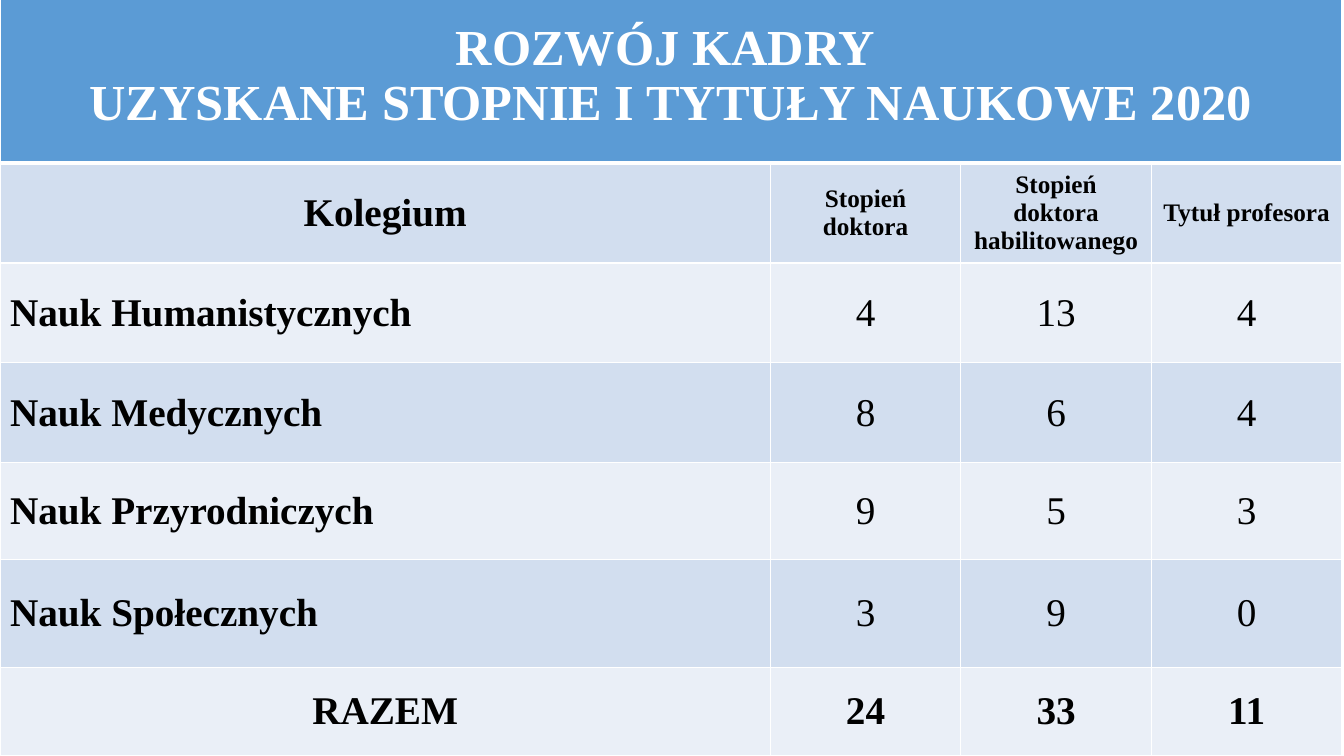
import pptx
import pptx.util
import pptx.dml.color
import pptx.enum.text
import pptx.oxml
import pptx.oxml.ns

Inches = pptx.util.Inches
ALIGN = pptx.enum.text.PP_ALIGN
BLUE, DARK, LIGHT = "5B9BD5", "D2DEEF", "EAEFF7"
WHITE, BLACK = "FFFFFF", "000000"


def color(code):
    return pptx.dml.color.RGBColor.from_string(code)


def style(cell, fill, size, ink, bold, align, under):
    cell.fill.solid()
    cell.fill.fore_color.rgb = color(fill)
    cell.vertical_anchor = pptx.enum.text.MSO_ANCHOR.MIDDLE
    for para in cell.text_frame.paragraphs:
        para.alignment = align
        for run in para.runs:
            run.font.name = "Times New Roman"
            run.font.size = pptx.util.Pt(size)
            run.font.bold = bold
            run.font.color.rgb = color(ink)
    # White borders go before the fill
    props = cell._tc.get_or_add_tcPr()
    for spot, side in enumerate("LRTB"):
        width = pptx.util.Pt(under if side == "B" else 1)
        line = pptx.oxml.parse_xml(
            f'<a:ln{side} {pptx.oxml.ns.nsdecls("a")} w="{width}"><a:solidFill>'
            f'<a:srgbClr val="{WHITE}"/></a:solidFill></a:ln{side}>')
        props.insert(spot, line)


deck = pptx.Presentation()
deck.slide_width, deck.slide_height = Inches(13.33), Inches(7.5)
slide = deck.slides.add_slide(deck.slide_layouts[6])

# Table contents
title = "ROZWÓJ KADRY \nUZYSKANE STOPNIE I TYTUŁY NAUKOWE 2020"
rows = [
    ["Kolegium", "Stopień doktora", "Stopień doktora habilitowanego", "Tytuł profesora"],
    ["Nauk Humanistycznych", 4, 13, 4],
    ["Nauk Medycznych", 8, 6, 4],
    ["Nauk Przyrodniczych", 9, 5, 3],
    ["Nauk Społecznych", 3, 9, 0],
    ["RAZEM", 24, 33, 11],
]
widths = [7.64, 1.89, 1.89, 1.89]
heights = [1.73, 0.99, 0.99, 0.99, 0.96, 1.07, 0.88]

# Table grid
table = slide.shapes.add_table(
    len(heights), len(widths), Inches(0), Inches(-0.11),
    Inches(sum(widths)), Inches(sum(heights))).table
for col, width in zip(table.columns, widths):
    col.width = Inches(width)
for row, height in zip(table.rows, heights):
    row.height = Inches(height)

# Title row
head = table.cell(0, 0)
head.merge(table.cell(0, len(widths) - 1))
head.text_frame.text = title
for c in range(len(widths)):
    style(table.cell(0, c), BLUE, 36, WHITE, True, ALIGN.CENTER, 3)

# Column heads, colleges and total
last = len(rows)
for r, row in enumerate(rows, 1):
    for c, value in enumerate(row):
        cell = table.cell(r, c)
        cell.text_frame.text = str(value)
        college = 1 < r < last
        style(cell, DARK if r % 2 else LIGHT,
              18 if r == 1 and c else 28, BLACK,
              c == 0 or not college,
              ALIGN.LEFT if college and c == 0 else ALIGN.CENTER, 1)

deck.save("out.pptx")
